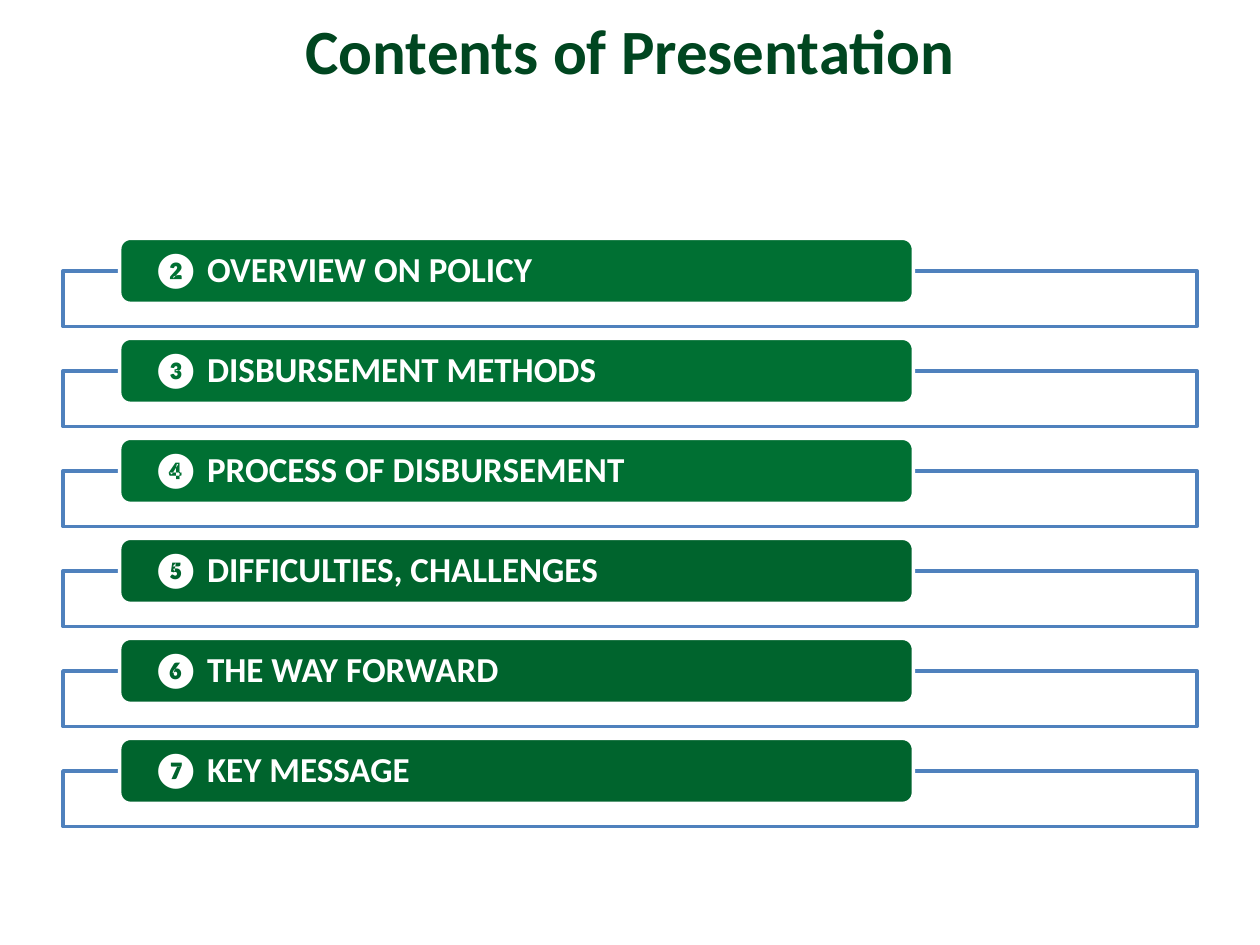
from pptx import Presentation
from pptx.dml.color import RGBColor
from pptx.enum import shapes, text
from pptx.oxml import ns
from pptx.util import Pt
from lxml import etree

TOPICS = [
    ("❷ OVERVIEW ON POLICY", "007033"),
    ("❸ DISBURSEMENT METHODS", "007033"),
    ("❹ PROCESS OF DISBURSEMENT", "007033"),
    ("❺ DIFFICULTIES, CHALLENGES", "00642D"),
    ("❻ THE WAY FORWARD", "00642D"),
    ("❼ KEY MESSAGE", "00642D"),
]
ROW_PITCH = 57.15


def color(value):
    """Turn a hex string into a colour."""
    return RGBColor.from_string(value)


def apply(target, values):
    """Set each named attribute on the target."""
    for name, value in values.items():
        setattr(target, name, value)


def add_box(slide, kind, bounds, fill, line=None, opacity=100):
    """Add a filled preset shape with an optional outline."""
    shape = slide.shapes.add_shape(kind, *(Pt(length) for length in bounds))
    shape.shadow.inherit = False
    shape.fill.solid()
    shape.fill.fore_color.rgb = color(fill)
    if opacity < 100:
        fill_color = shape.fill._xPr.find(".//" + ns.qn("a:srgbClr"))
        alpha = etree.SubElement(fill_color, ns.qn("a:alpha"))
        alpha.set("val", str(opacity * 1000))
    if line:
        shape.line.color.rgb = color(line)
        shape.line.width = Pt(2)
    else:
        shape.line.fill.background()
    return shape


def write_text(shape, words, size, font_color, frame_format, paragraph_format):
    """Write one bold line of text in a shape."""
    frame = shape.text_frame
    apply(frame, {"word_wrap": True,
                  "vertical_anchor": text.MSO_ANCHOR.MIDDLE, **frame_format})
    paragraph = frame.paragraphs[0]
    paragraph.text = words
    apply(paragraph, paragraph_format)
    font = paragraph.runs[0].font
    apply(font, {"name": "Calibri", "size": Pt(size), "bold": True})
    font.color.rgb = color(font_color)


def add_topic(slide, index, words, fill):
    """Add one row: an outlined panel with a topic bar over its top edge."""
    top = 136.2 + index * ROW_PITCH
    add_box(slide, shapes.MSO_SHAPE.RECTANGLE, (36, top + 18.6, 648, 31.75),
            "FFFFFF", "4F81BD", 90)
    bar = add_box(slide, shapes.MSO_SHAPE.ROUNDED_RECTANGLE,
                  (68.4, top, 453.6, 37.2), fill, "FFFFFF")
    write_text(bar, words, 20, "FFFFFF",
               {"margin_left": Pt(17), "margin_right": Pt(17),
                "margin_top": 0, "margin_bottom": 0},
               {"alignment": text.PP_ALIGN.LEFT, "line_spacing": 0.9})


def add_title(slide, words):
    """Add the title band across the top."""
    band = add_box(slide, shapes.MSO_SHAPE.RECTANGLE, (0, 0, 720, 56.7),
                   "FFFFFF", opacity=70)
    write_text(band, words, 36, "004620", {},
               {"alignment": text.PP_ALIGN.CENTER})


def main():
    """Build and save the contents slide."""
    presentation = Presentation()
    apply(presentation, {"slide_width": Pt(720), "slide_height": Pt(540)})
    slide = presentation.slides.add_slide(presentation.slide_layouts[6])
    for index, (words, fill) in enumerate(TOPICS):
        add_topic(slide, index, words, fill)
    add_title(slide, "Contents of Presentation")
    presentation.save("out.pptx")


if __name__ == "__main__":
    main()
